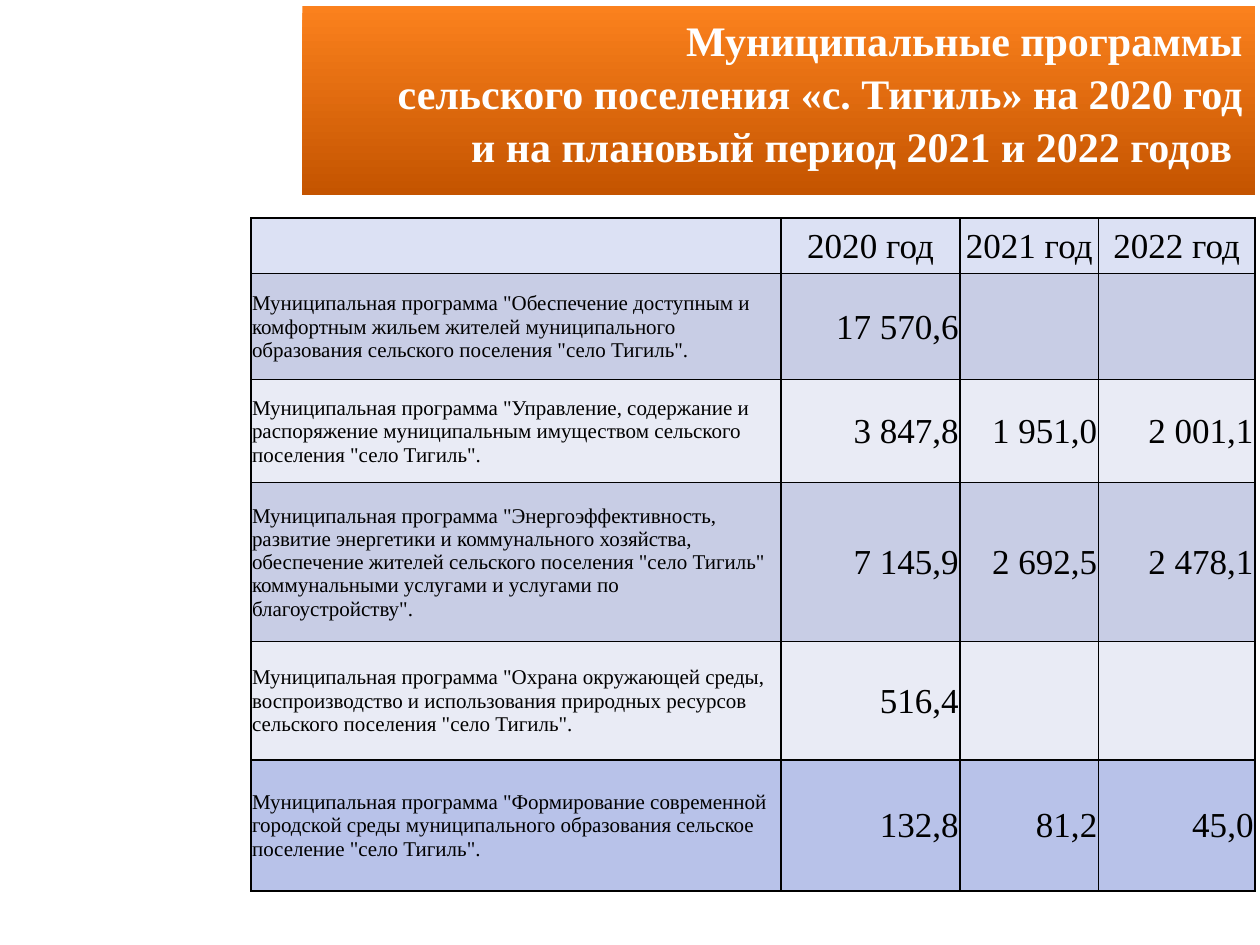
from dataclasses import dataclass

from pptx import Presentation
from pptx.dml.color import RGBColor
from pptx.enum.shapes import MSO_SHAPE
from pptx.enum.text import MSO_ANCHOR as Anchor, PP_ALIGN as Align
from pptx.oxml import parse_xml
from pptx.oxml.ns import nsdecls
from pptx.util import Pt

FONT = "Times New Roman"
COLORS = {
    "banner_top": "FB811D",
    "banner_bottom": "C45400",
    "banner_text": "FFFFFF",
    "text": "000000",
    "border": "000000",
    "header": "DCE1F4",
    "dark": "C8CDE5",
    "light": "E9EBF5",
    "accent": "B8C2E9",
}


@dataclass
class BudgetRow:
    height: float
    fill: str
    label: str
    amounts: tuple[str, str, str]


BUDGET_ROWS = [
    BudgetRow(31.7, "header", "", ("2020 год", "2021 год", "2022 год")),
    BudgetRow(
        60.5, "dark",
        'Муниципальная программа "Обеспечение доступным и комфортным жильем жителей '
        'муниципального образования сельского поселения "село Тигиль".',
        ("17 570,6", "", "")),
    BudgetRow(
        59, "light",
        'Муниципальная программа "Управление, содержание и распоряжение '
        'муниципальным имуществом сельского поселения "село Тигиль".',
        ("3 847,8", "1 951,0", "2 001,1")),
    BudgetRow(
        90.7, "dark",
        'Муниципальная программа "Энергоэффективность, развитие энергетики и '
        'коммунального хозяйства, обеспечение жителей сельского поселения '
        '"село Тигиль" коммунальными услугами и услугами по благоустройству".',
        ("7 145,9", "2 692,5", "2 478,1")),
    BudgetRow(
        67.7, "light",
        'Муниципальная программа "Охрана окружающей среды, воспроизводство и '
        'использования природных ресурсов сельского поселения "село Тигиль".',
        ("516,4", "", "")),
    BudgetRow(
        74.9, "accent",
        'Муниципальная программа "Формирование современной городской среды '
        'муниципального образования сельское поселение "село Тигиль".',
        ("132,8", "81,2", "45,0")),
]
COLUMN_WIDTHS = (303.1, 102.2, 79.2, 89.3)


def rgb(name: str) -> RGBColor:
    return RGBColor.from_string(COLORS[name])


def format_runs(paragraph, size: float, color: str, bold: bool = False) -> None:
    for run in paragraph.runs:
        run.font.name = FONT
        run.font.size = Pt(size)
        run.font.bold = bold
        run.font.color.rgb = rgb(color)


def draw_banner(slide) -> None:
    banner = slide.shapes.add_shape(
        MSO_SHAPE.RECTANGLE, Pt(172.8), Pt(3.6), Pt(544.3), Pt(108))
    banner.shadow.inherit = False
    banner.line.fill.background()
    banner.fill.gradient()
    banner.fill.gradient_angle = 270
    for stop, color in zip(banner.fill.gradient_stops, ("banner_top", "banner_bottom")):
        stop.color.rgb = rgb(color)
    banner.fill.gradient_stops[0].position = 0
    banner.fill.gradient_stops[1].position = 1
    frame = banner.text_frame
    frame.word_wrap = True
    frame.vertical_anchor = Anchor.TOP
    title = frame.paragraphs[0]
    title.text = ("Муниципальные программы\v"
                  "сельского поселения «с. Тигиль» на 2020 год\v"
                  "и на плановый период 2021 и 2022 годов ")
    title.alignment = Align.RIGHT
    title.line_spacing = 1.05
    format_runs(title, 24, "banner_text", bold=True)


def add_borders(cell) -> None:
    properties = cell._tc.get_or_add_tcPr()
    for side in ("lnL", "lnR", "lnT", "lnB"):
        properties.append(parse_xml(
            f'<a:{side} {nsdecls("a")} w="{Pt(1)}"><a:solidFill>'
            f'<a:srgbClr val="{COLORS["border"]}"/></a:solidFill></a:{side}>'))


def fill_cell(cell, content: str, size: float, align: Align, fill: str) -> None:
    add_borders(cell)
    cell.fill.solid()
    cell.fill.fore_color.rgb = rgb(fill)
    cell.margin_left = cell.margin_right = cell.margin_top = Pt(0.75)
    cell.margin_bottom = Pt(0)
    cell.vertical_anchor = Anchor.MIDDLE
    paragraph = cell.text_frame.paragraphs[0]
    paragraph.alignment = align
    if content:
        paragraph.text = content
        format_runs(paragraph, size, "text")


def draw_budget(slide) -> None:
    budget = slide.shapes.add_table(
        len(BUDGET_ROWS), len(COLUMN_WIDTHS), Pt(143.3), Pt(124.6),
        Pt(sum(COLUMN_WIDTHS)), Pt(sum(row.height for row in BUDGET_ROWS))).table
    for column, width in zip(budget.columns, COLUMN_WIDTHS):
        column.width = Pt(width)
    for index, (table_row, row) in enumerate(zip(budget.rows, BUDGET_ROWS)):
        table_row.height = Pt(row.height)
        label_cell, *amount_cells = table_row.cells
        fill_cell(label_cell, row.label, 12, Align.LEFT, row.fill)
        align = Align.RIGHT if index else Align.CENTER
        for cell, amount in zip(amount_cells, row.amounts):
            fill_cell(cell, amount, 20, align, row.fill)


def main() -> None:
    deck = Presentation()
    deck.slide_width, deck.slide_height = Pt(720), Pt(540)
    slide = deck.slides.add_slide(deck.slide_layouts[6])
    draw_banner(slide)
    draw_budget(slide)
    deck.save("out.pptx")


if __name__ == "__main__":
    main()
